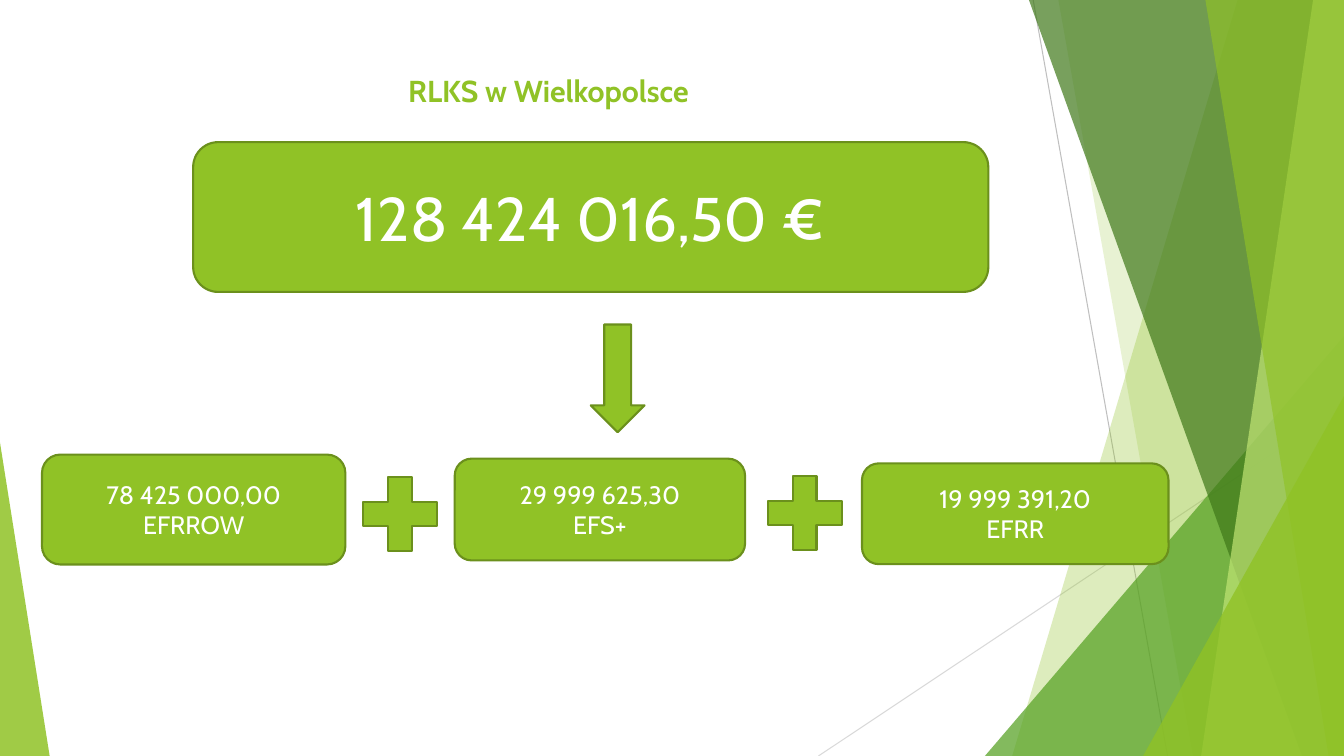
"""Build the slide on RLKS funding in Wielkopolska."""
from lxml import etree
from pptx import Presentation
from pptx.dml.color import RGBColor
from pptx.enum.shapes import MSO_CONNECTOR, MSO_SHAPE
from pptx.enum.text import MSO_ANCHOR, MSO_AUTO_SIZE, PP_ALIGN
from pptx.oxml.ns import qn
from pptx.util import Pt

LINE = MSO_CONNECTOR.STRAIGHT
TRIANGLE = MSO_SHAPE.ISOSCELES_TRIANGLE
BOX = MSO_SHAPE.ROUNDED_RECTANGLE
PLUS = MSO_SHAPE.MATH_PLUS
ARROW = MSO_SHAPE.DOWN_ARROW
CENTER = PP_ALIGN.CENTER
MIDDLE, TOP = MSO_ANCHOR.MIDDLE, MSO_ANCHOR.TOP
FONT = "Cabin"
W, H = 960, 540
COLORS = {
    "green": "90C226", "border": "6B901C", "leaf": "54A021", "dark": "3F7819",
    "light": "C0E474", "white": "FFFFFF", "gray": "BFBFBF", "pale": "D9D9D9",
}


def paint(sp, color, alpha=None):
    sp.shadow.inherit = False
    sp.fill.solid()
    sp.fill.fore_color.rgb = RGBColor.from_string(COLORS[color])
    if alpha is None:
        sp.line.color.rgb = RGBColor.from_string(COLORS["border"])
        sp.line.width = Pt(1.5)
    else:
        sp.line.fill.background()
        clr = sp.fill._xPr.find(".//" + qn("a:srgbClr"))
        etree.SubElement(clr, qn("a:alpha")).set("val", str(alpha * 1000))


def write(sp, text, size, color, anchor=MIDDLE, bold=False):
    tf = sp.text_frame
    tf.text = text
    tf.word_wrap = True
    tf.auto_size = MSO_AUTO_SIZE.NONE
    tf.vertical_anchor = anchor
    for p in tf.paragraphs:
        p.alignment = CENTER
        for r in p.runs:
            r.font.name = FONT
            r.font.size = Pt(size)
            r.font.bold = bold
            r.font.color.rgb = RGBColor.from_string(COLORS[color])


prs = Presentation()
prs.slide_width, prs.slide_height = Pt(W), Pt(H)
s = prs.slides.add_slide(prs.slide_layouts[5])

for x1, y1, x2, y2, color in [(738, 0, 834, H, "gray"), (W, 290, 584.6, H, "pale")]:
    line = s.shapes.add_connector(LINE, Pt(x1), Pt(y1), Pt(x2), Pt(y2))
    line.line.color.rgb = RGBColor.from_string(COLORS[color])
    line.line.width = Pt(0.75)
    etree.SubElement(line._element.spPr, qn("a:effectLst"))

facets = [
    ("band", (884, 723), "green", 30),
    ("band", (756, 852), "green", 20),
    ("triangle", (703.5, 240, 256.5, 300, 1), "leaf", 72),
    ("band", (735, 929.5), "dark", 70),
    ("band", (938, 858.5), "light", 70),
    ("band", (861, 949), "green", 65),
    ("triangle", (816.5, 283, 143.5, 257, 1), "green", 80),
    ("triangle", (0, 316, 35.5, 224, 0), "green", 85),
]
for kind, geometry, color, alpha in facets:
    if kind == "band":
        top_x, bottom_x = geometry
        fb = s.shapes.build_freeform(top_x, 0, scale=Pt(1))
        fb.add_line_segments([(W, 0), (W, H), (bottom_x, H)], close=True)
        sp = fb.convert_to_shape()
    else:
        x, y, w, h, apex = geometry
        sp = s.shapes.add_shape(TRIANGLE, Pt(x), Pt(y), Pt(w), Pt(h))
        sp.adjustments[0] = apex
    paint(sp, color, alpha)

title = s.shapes.title
title.left, title.top, title.width, title.height = Pt(53.3), Pt(48), Pt(677), Pt(54)
write(title, "RLKS w Wielkopolsce", 21.6, "green", TOP, True)

blocks = [
    (BOX, 138, 101.5, 568, 107, "128 424 016,50 €", 44),
    (BOX, 30, 324.7, 216.7, 78.5, "78 425 000,00\nEFRROW", 18),
    (PLUS, 249.8, 331, 72, 72, "", 18),
    (BOX, 324.8, 327.6, 207.4, 72.7, "29 999 625,30\nEFS+", 18),
    (PLUS, 538.8, 330.3, 72, 72, "", 18),
    (BOX, 615.7, 331, 219, 72, "19 999 391,20\nEFRR", 18),
    (ARROW, 422, 231.8, 38.4, 77, "", 18),
]
for shape, x, y, w, h, text, size in blocks:
    sp = s.shapes.add_shape(shape, Pt(x), Pt(y), Pt(w), Pt(h))
    paint(sp, "green")
    if text:
        write(sp, text, size, "white")

prs.save("out.pptx")
